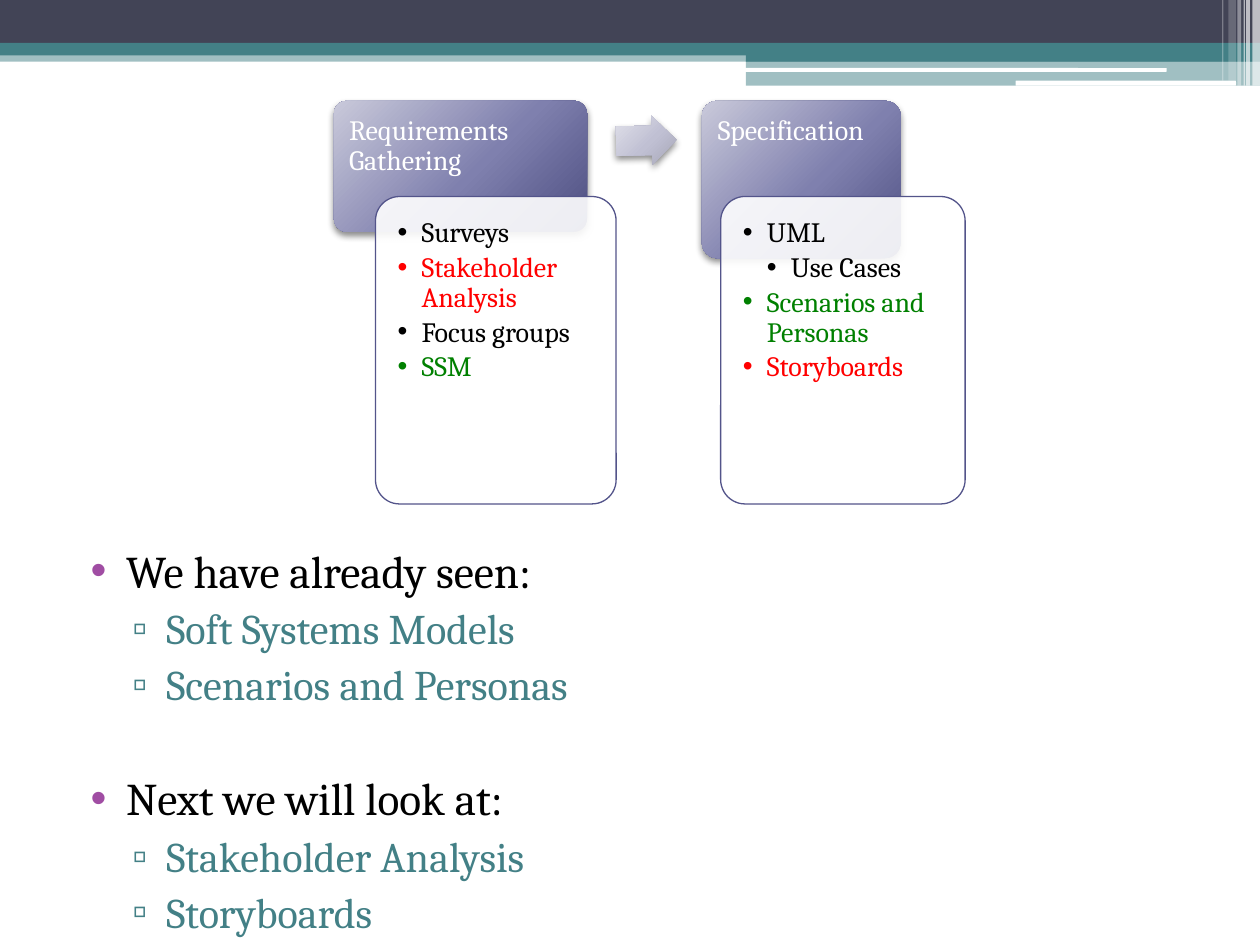
from lxml.etree import SubElement
from pptx import Presentation
from pptx.dml.color import RGBColor
from pptx.enum.shapes import MSO_SHAPE
from pptx.enum.text import MSO_ANCHOR, MSO_AUTO_SIZE, PP_ALIGN
from pptx.oxml import parse_xml
from pptx.oxml.ns import nsdecls, qn
from pptx.util import Inches, Pt

FONT = "Cambria"
HUE = {
    "navy": "424456", "teal": "438086", "white": "FFFFFF", "black": "000000",
    "red": "FF0000", "green": "008000", "plum": "A04DA3", "edge": "53548A",
}
DEEP = ["C9C9DA", "7F80AE", "4D4E81"]
PALE = ["E1E1EA", "C0C0D3", "A7A7B7"]
BANDS = [
    (0, 0.4, 10, 0.09, "teal", 50),
    (0, 0, 10, 0.34, "navy", 100),
    (0, 0.34, 10, 0.1, "teal", 100),
    (5.92, 0.39, 4.08, 0.1, "teal", 100),
    (5.92, 0.48, 4.08, 0.2, "teal", 50),
]
RULES = [(5.91, 0.54, 3.35, 0.03), (8.06, 0.64, 1.75, 0.04)]
STRIPES = [
    (9.94, 0.06, 0.68, 65), (9.89, 0.03, 0.68, 65), (9.87, 0.01, 0.68, 60),
    (9.82, 0.03, 0.68, 40), (9.75, 0.06, 0.64, 20), (9.7, 0.01, 0.64, 30),
]
STAGES = [
    {"name": "Requirements Gathering", "head": (2.65, 0.8, 2.01, 1.04),
     "card": (2.98, 1.56, 1.91, 2.44),
     "items": [("Surveys", 1, "black"), ("Stakeholder Analysis", 1, "red"),
               ("Focus groups", 1, "black"), ("SSM", 1, "green")]},
    {"name": "Specification", "head": (5.57, 0.8, 1.58, 1.25),
     "card": (5.72, 1.56, 1.94, 2.44),
     "items": [("UML", 1, "black"), ("Use Cases", 2, "black"),
               ("Scenarios and Personas", 1, "green"),
               ("Storyboards", 1, "red")]},
]
ARROW = (4.89, 0.92, 0.48, 0.39)
NOTES = [
    ("We have already seen:", ["Soft Systems Models", "Scenarios and Personas"]),
    ("Next we will look at:", ["Stakeholder Analysis", "Storyboards"]),
]
BODY = (0.5, 4.26, 9.08, 2.95)


def rgb(name):
    return RGBColor.from_string(HUE[name])


def shape(kind, box, fill=None, alpha=100):
    item = slide.shapes.add_shape(kind, *map(Inches, box))
    item.shadow.inherit = False
    item.line.fill.background()
    if fill:
        item.fill.solid()
        item.fill.fore_color.rgb = rgb(fill)
        if alpha < 100:
            tint = item.fill._xPr.find(".//" + qn("a:srgbClr"))
            SubElement(tint, qn("a:alpha"), val=str(alpha * 1000))
    return item


def shade(item, tones):
    stops = "".join(
        f'<a:gs pos="{pos}"><a:srgbClr val="{tone}"/></a:gs>'
        for pos, tone in zip((0, 55000, 100000), tones))
    props = item.element.spPr
    props.find(qn("a:prstGeom")).addnext(parse_xml(
        f'<a:gradFill {nsdecls("a")} rotWithShape="1"><a:gsLst>{stops}</a:gsLst>'
        '<a:path path="circle"><a:fillToRect l="-40000" t="-90000" '
        'r="140000" b="190000"/></a:path></a:gradFill>'))
    props.find(qn("a:effectLst")).append(parse_xml(
        f'<a:outerShdw {nsdecls("a")} blurRad="{Pt(4)}" dist="{Pt(2)}" '
        'dir="5400000" rotWithShape="0"><a:srgbClr val="000000">'
        '<a:alpha val="45000"/></a:srgbClr></a:outerShdw>'))


def frame(item, pad):
    text = item.text_frame
    text.word_wrap = True
    text.auto_size = MSO_AUTO_SIZE.NONE
    text.vertical_anchor = MSO_ANCHOR.TOP
    text.margin_left = text.margin_right = Inches(pad[0])
    text.margin_top = text.margin_bottom = Inches(pad[1])
    return text


def write(text, words, size, tone, level=0, mark=None, dot=None, left=0, hang=0):
    first = text.paragraphs[0]
    para = text.add_paragraph() if first.runs else first
    para.add_run().text = words
    para.level = level
    para.alignment = PP_ALIGN.LEFT
    if mark:
        props = para._p.get_or_add_pPr()
        props.set("marL", str(Inches(left)))
        props.set("indent", str(-Inches(hang)))
        if dot:
            tint = SubElement(props, qn("a:buClr"))
            SubElement(tint, qn("a:srgbClr"), val=HUE[dot])
        SubElement(props, qn("a:buFont"), typeface="Arial")
        SubElement(props, qn("a:buChar"), char=mark)
    para.font.name = FONT
    para.font.size = Pt(size)
    para.font.color.rgb = rgb(tone)
    return para


deck = Presentation()
deck.slide_width, deck.slide_height = Inches(10), Inches(7.5)
slide = deck.slides.add_slide(deck.slide_layouts[1])
title = slide.shapes.title.element
title.getparent().remove(title)

for *box, tone, alpha in BANDS:
    shape(MSO_SHAPE.RECTANGLE, box, tone, alpha)
for box in RULES:
    shape(MSO_SHAPE.ROUNDED_RECTANGLE, box, "white")
for left, wide, high, alpha in STRIPES:
    shape(MSO_SHAPE.RECTANGLE, (left, 0, wide, high), "white", alpha)

for stage in STAGES:
    head = shape(MSO_SHAPE.ROUNDED_RECTANGLE, stage["head"])
    head.adjustments[0] = 0.1
    shade(head, DEEP)
    write(frame(head, (0.09, 0.09)), stage["name"], 16, "white").line_spacing = 0.9

    card = shape(MSO_SHAPE.ROUNDED_RECTANGLE, stage["card"], "white", 90)
    card.adjustments[0] = 0.1
    card.line.color.rgb = rgb("edge")
    card.line.width = Pt(0.75)
    text = frame(card, (0.12, 0.12))
    for words, level, tone in stage["items"]:
        para = write(text, words, 16, tone, level, "•", left=0.19 * level, hang=0.19)
        para.line_spacing = 0.9
        para.space_after = Pt(2.5)

arrow = shape(MSO_SHAPE.RIGHT_ARROW, ARROW)
arrow.adjustments[0] = 0.6
arrow.rotation = 358.8
shade(arrow, PALE)

body = slide.placeholders[1]
body.left, body.top, body.width, body.height = map(Inches, BODY)
text = frame(body, (0.1, 0.05))
for row, (lead, points) in enumerate(NOTES):
    para = write(text, lead, 25.9, "black", 0, "•", "plum", 0.4, 0.28)
    para.space_before = Pt(35 if row else 3)
    for point in points:
        para = write(text, point, 24.1, "teal", 1, "▫", "teal", 0.72, 0.27)
        para.space_before = Pt(3)

deck.save("out.pptx")
